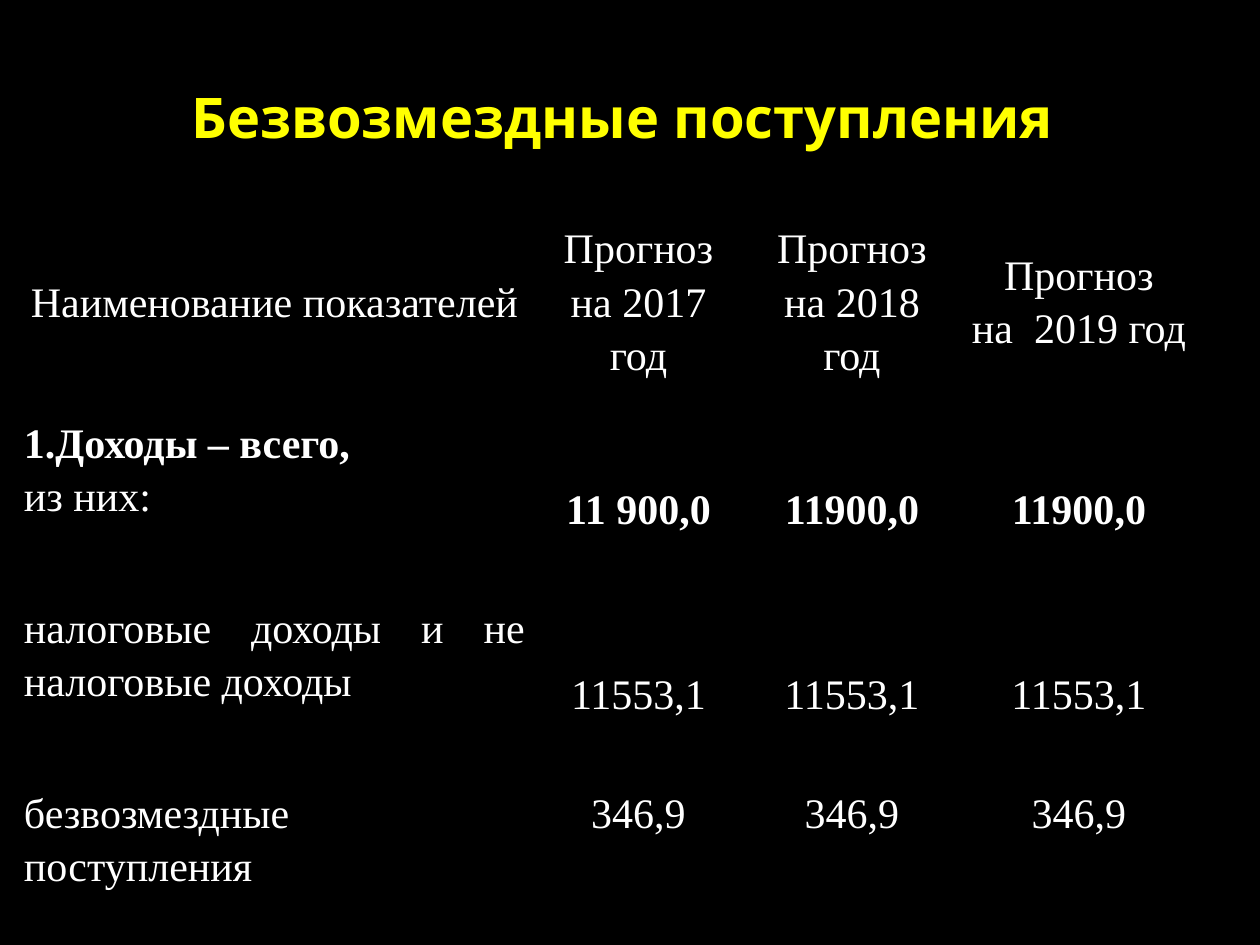
from lxml import etree
from pptx import Presentation, util as u
from pptx.dml.color import RGBColor
from pptx.enum import text
from pptx.oxml.ns import qn

PX = u.Inches(1) // 126
COLORS = {"back": "000000", "title": "FFFF00", "body": "FFFFFF"}
CENTER, JUSTIFY = text.PP_ALIGN.CENTER, text.PP_ALIGN.JUSTIFY
TOP, MIDDLE = text.MSO_ANCHOR.TOP, text.MSO_ANCHOR.MIDDLE

COLUMNS = [519, 209, 218, 236]
ROWS = [229, 185, 185, 123]
HEADER = ["Наименование показателей", "Прогноз\nна 2017 год",
          "Прогноз\nна 2018 год", "Прогноз\nна  2019 год"]
INCOME = [
    ["1.Доходы – всего, \nиз них:", "11 900,0", "11900,0", "11900,0"],
    ["налоговые доходы и не налоговые доходы"] + ["11553,1"] * 3,
    ["безвозмездные поступления"] + ["346,9"] * 3,
]


def write(tf, content, *, size=24, font="Times New Roman", color="body",
          bold=False, align=CENTER, spacing=1.15):
    """Fill a text frame, one paragraph a line; bold covers the first line only."""
    for i, line in enumerate(content.split("\n")):
        p = tf.add_paragraph() if i else tf.paragraphs[0]
        p.alignment, p.line_spacing = align, spacing
        r = p.add_run()
        r.text = line
        r.font.size, r.font.name = u.Pt(size), font
        r.font.bold = bold and i == 0
        r.font.color.rgb = RGBColor.from_string(COLORS[color])


def add_borders(cell, color):
    tc_pr = cell._tc.get_or_add_tcPr()
    for i, side in enumerate(("lnL", "lnR", "lnT", "lnB")):
        ln = etree.Element(qn(f"a:{side}"), w=str(u.Pt(1)))
        fill = etree.SubElement(ln, qn("a:solidFill"))
        etree.SubElement(fill, qn("a:srgbClr"), val=COLORS[color])
        tc_pr.insert(i, ln)


class Deck:
    def __init__(self, width, height):
        self.prs = Presentation()
        self.prs.slide_width, self.prs.slide_height = width * PX, height * PX
        self.s = self.prs.slides.add_slide(self.prs.slide_layouts[6])
        fill = self.s.background.fill
        fill.solid()
        fill.fore_color.rgb = RGBColor.from_string(COLORS["back"])

    def title(self, content, x, y, w, h):
        sp = self.s.shapes.add_textbox(x * PX, y * PX, w * PX, h * PX)
        tf = sp.text_frame
        tf.word_wrap, tf.vertical_anchor = True, MIDDLE
        write(tf, content, size=32, font="Open Sans", color="title",
              bold=True, spacing=1.0)

    def table(self, x, y, columns, rows):
        frame = self.s.shapes.add_table(len(rows), len(columns), x * PX, y * PX,
                                        sum(columns) * PX, sum(rows) * PX)
        table = frame.table
        table.first_row = table.horz_banding = False
        for column, width in zip(table.columns, columns):
            column.width = width * PX
        for row, height in zip(table.rows, rows):
            row.height = height * PX
        return table

    def cell(self, cell, content, anchor, **style):
        cell.fill.background()
        add_borders(cell, "back")
        cell.margin_left = cell.margin_right = 9 * PX
        cell.margin_top = cell.margin_bottom = 0
        cell.vertical_anchor = anchor
        write(cell.text_frame, content, **style)


def main():
    deck = Deck(1260, 945)
    deck.title("Безвозмездные поступления ", 63, 38, 1134, 157)
    table = deck.table(15, 185, COLUMNS, ROWS)
    for i, values in enumerate([HEADER] + INCOME):
        for j, value in enumerate(values):
            label = i > 0 and j == 0
            deck.cell(table.cell(i, j), value,
                      TOP if label or i == len(INCOME) else MIDDLE,
                      align=JUSTIFY if label else CENTER, bold=i == 1)
    deck.prs.save("out.pptx")


if __name__ == "__main__":
    main()
